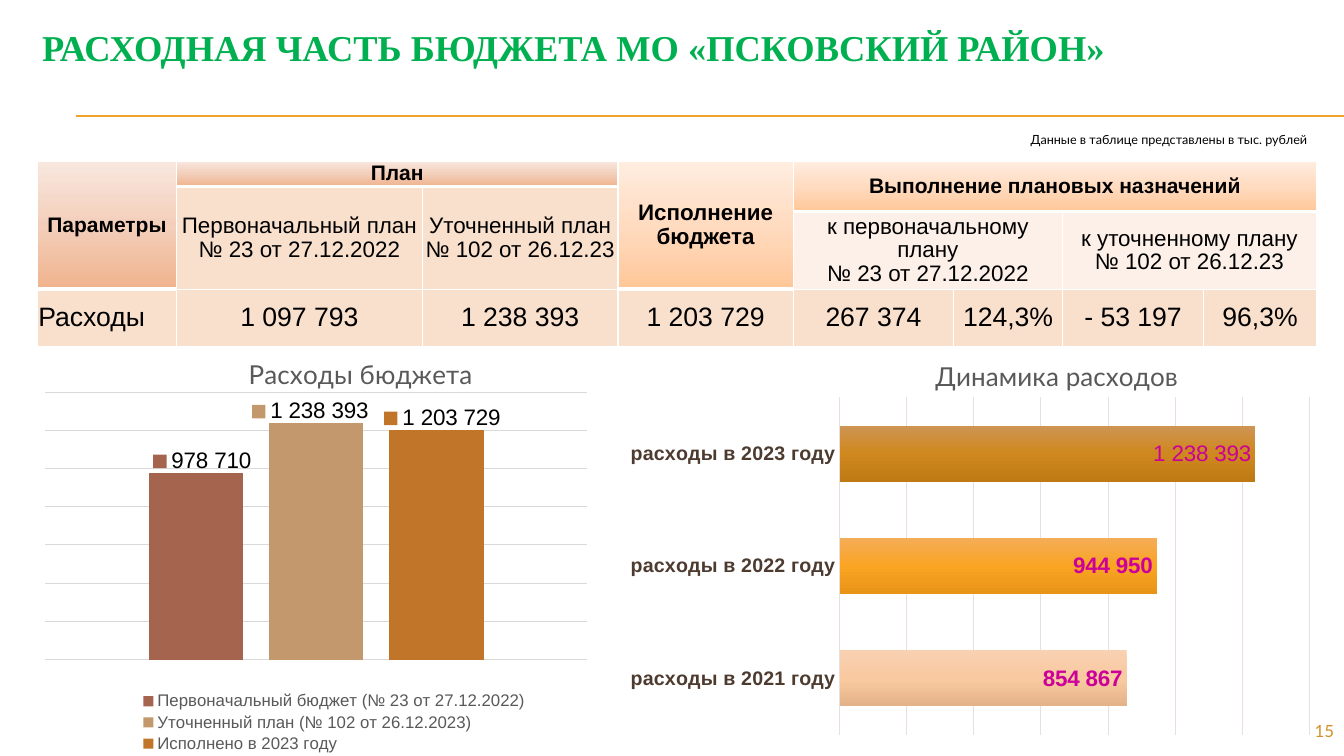
from dataclasses import dataclass
from lxml.etree import SubElement
from pptx import Presentation
from pptx.chart.data import CategoryChartData as Data
from pptx.dml.color import RGBColor as Rgb
from pptx.enum.chart import XL_CHART_TYPE as Kind, XL_LABEL_POSITION as Spot
from pptx.enum.chart import XL_LEGEND_POSITION as Side, XL_TICK_MARK as Tick
from pptx.enum.shapes import MSO_CONNECTOR as Link
from pptx.enum.text import MSO_ANCHOR as Anchor, PP_ALIGN as Align
from pptx.oxml import parse_xml
from pptx.oxml.ns import nsdecls, qn
from pptx.util import Inches, Pt


@dataclass(frozen=True)
class Theme:
    serif: str = "Times New Roman"
    sans: str = "Lato"
    plain: str = "Arial"
    black: str = "000000"
    white: str = "FFFFFF"
    green: str = "00B050"
    gold: str = "F0A22E"
    number: str = "D48F29"
    grey: str = "595959"
    brown: str = "4E3B30"
    pink: str = "CC0099"
    grid: str = "D9D9D9"
    pale: str = "E9E0DB"
    sand: str = "F9E0CD"
    cream: str = "FCF0E8"
    rose: tuple = ("F8E7DE", "F3CFBB", "EFB38D")
    peach: tuple = ("FFEDE0", "FFDBC0", "FFC798")
    cols: tuple = ("A5644E", "C3986D", "C17529")
    bars: tuple = (("F8D1B2", "F9C9A0", "E3B289"),
                   ("F4AD58", "FAA424", "E89416"),
                   ("CE9454", "CF881E", "BF7A14"))
    head: float = 26
    title: float = 18.6
    cell: float = 16
    cap: float = 15
    sum: float = 19
    label: float = 16
    axis: float = 14
    small: float = 12
    base: float = 10
    note: float = 9


T = Theme()
WIDE, HIGH = Inches(13.33), Inches(7.5)
SPACED = r"[>=1000000]#\ ###\ ##0;###\ ##0"
HEADS = [  # row, column, rows, columns, text, size, bold, fill
    (0, 0, 3, 1, "Параметры", T.cap, True, T.rose),
    (0, 1, 1, 2, "План", T.cap, True, T.rose),
    (0, 3, 3, 1, "Исполнение бюджета", T.cell, True, T.peach),
    (0, 4, 2, 4, "Выполнение плановых назначений", T.cap, True, T.peach),
    (1, 1, 2, 1, "Первоначальный план\n№ 23 от 27.12.2022", T.cell, False, T.sand),
    (1, 2, 2, 1, "Уточненный план № 102 от 26.12.23", T.cell, False, T.sand),
    (2, 4, 1, 2, "к первоначальному плану\n№ 23 от 27.12.2022", T.cell, False, T.cream),
    (2, 6, 1, 2, "к уточненному плану\n№ 102 от 26.12.23", T.cell, False, T.cream),
]
SUMS = ["Расходы", "1 097 793", "1 238 393", "1 203 729",
        "267 374", "124,3%", "- 53 197", "96,3%"]
PLANS = [("Первоначальный бюджет (№ 23 от 27.12.2022)", [978710]),
         ("Уточненный план (№ 102 от 26.12.2023)", [1238393]),
         ("Исполнено в 2023 году", [1203729])]
YEARS = ["расходы в 2021 году", "расходы в 2022 году", "расходы в 2023 году"]
SPENT = [("Расходы", [854867, 944950, 1238393])]


def across(share):
    return round(WIDE * share / 100)


def down(share):
    return round(HIGH * share / 100)


def area(x, y, wide, high):
    """Turn percent shares of the slide into lengths."""
    return across(x), down(y), across(wide), down(high)


def put(item, **values):
    for name, value in values.items():
        setattr(item, name, value)


def style(font, face, size, hue, bold=False):
    put(font, name=face, size=Pt(size), bold=bold)
    font.color.rgb = Rgb.from_string(hue)


def paint(fill, hue):
    fill.solid()
    fill.fore_color.rgb = Rgb.from_string(hue)


def blend(fill, owner, hues):
    """Fill from top to bottom; the fill must be the last gradient in owner."""
    fill.gradient()
    fill.gradient_angle = 270
    stops = owner.xpath(".//a:gsLst")[-1]
    stops.clear()
    for step, hue in enumerate(hues):
        stop = SubElement(stops, qn("a:gs"), pos=str(step * 50000))
        SubElement(stop, qn("a:srgbClr"), val=hue)


def write(slide, box, text, font, align=Align.LEFT, anchor=Anchor.TOP):
    frame = slide.shapes.add_textbox(*area(*box)).text_frame
    put(frame, text=text, word_wrap=True, vertical_anchor=anchor)
    line = frame.paragraphs[0]
    line.alignment = align
    style(line.runs[0].font, *font)


def rule(slide, y):
    line = slide.shapes.add_connector(Link.STRAIGHT, across(5.63), down(y), WIDE, down(y))
    line.line.width = Pt(0.75)
    line.line.color.rgb = Rgb.from_string(T.gold)
    SubElement(line.element.spPr, qn("a:effectLst"))


def edge(cell, base):
    """Give a cell white borders, the lower one base points wide."""
    props = cell._tc.get_or_add_tcPr()
    for spot, (side, width) in enumerate(zip("LRTB", (1, 1, 1, base))):
        props.insert(spot, parse_xml(
            f'<a:ln{side} {nsdecls("a")} w="{Pt(width)}"><a:solidFill>'
            f'<a:srgbClr val="{T.white}"/></a:solidFill></a:ln{side}>'))


def grid(slide):
    frame = slide.shapes.add_table(4, 8, *area(2.78, 21.33, 95.18, 24.13))
    table = frame.table
    put(table, first_row=False, horz_banding=False)
    for col, share in zip(table.columns, (10.35, 18.3, 14.55, 13.05, 11.93, 8.1, 10.5, 8.4)):
        col.width = across(share)
    for row, share in zip(table.rows, (3.33, 3.33, 9.87, 7.6)):
        row.height = down(share)
    sums = [(3, col, 1, 1, text, T.sum, False, T.sand) for col, text in enumerate(SUMS)]
    for row, col, rows, cols, text, size, bold, fill in HEADS + sums:
        cell = table.cell(row, col)
        if rows * cols > 1:
            cell.merge(table.cell(row + rows - 1, col + cols - 1))
        put(cell, text=text, vertical_anchor=Anchor.MIDDLE, margin_left=Inches(0.01),
            margin_right=Inches(0.01), margin_top=Inches(0.01), margin_bottom=0)
        for line in cell.text_frame.paragraphs:
            left = (row, col) == (3, 0)
            put(line, alignment=Align.LEFT if left else Align.CENTER, line_spacing=0.95)
            style(line.runs[0].font, T.plain, size, T.black, bold)
        shaded = isinstance(fill, tuple)
        if shaded:
            blend(cell.fill, frame.element, fill)
        else:
            paint(cell.fill, fill)
        edge(cell, 3 if shaded else 1)


def place(part, index, lead="", **box):
    """Lay out a chart part by shares of the chart, as child number index."""
    for old in part.xpath("c:layout"):
        part.remove(old)
    sizes = "".join(f'<c:{key} val="{value}"/>' for key, value in box.items())
    part.insert(index, parse_xml(
        f'<c:layout {nsdecls("c")}><c:manualLayout>{lead}{sizes}'
        '</c:manualLayout></c:layout>'))


EDGE = '<c:xMode val="edge"/><c:yMode val="edge"/>'
INNER = '<c:layoutTarget val="inner"/>' + EDGE


def graph(slide, kind, box, cats, rows, title, spot, plot, hue, gap, lap):
    data = Data(number_format=SPACED)
    data.categories = cats
    for name, values in rows:
        data.add_series(name, values)
    chart = slide.shapes.add_chart(kind, *area(*box), data).chart
    style(chart.font, T.sans, T.base, T.black)
    put(chart, has_title=True, has_legend=False)
    chart.chart_title.text_frame.text = title
    run = chart.chart_title.text_frame.paragraphs[0].runs[0]
    style(run.font, T.sans, T.title, T.grey)
    place(chart.element.xpath(".//c:title")[0], 1, EDGE, **dict(zip("xy", spot)))
    place(chart.element.xpath(".//c:plotArea")[0], 0, INNER, **dict(zip("xywh", plot)))
    axis = chart.value_axis
    put(axis, visible=False, minimum_scale=0, maximum_scale=1400000,
        major_unit=200000, has_major_gridlines=True)
    line = axis.major_gridlines.format.line
    line.width = Pt(0.75)
    line.color.rgb = Rgb.from_string(hue)
    put(chart.plots[0], gap_width=gap, overlap=lap, vary_by_categories=False)
    return chart


def label(series, spot, hue, bold=False, key=False):
    marks = series.data_labels
    put(marks, show_value=True, show_legend_key=key, position=spot,
        number_format=SPACED, number_format_is_linked=False)
    style(marks.font, T.plain, T.label, hue, bold)


def single(series, index, spot, hue):
    """Style the label of one point apart from the rest."""
    mark = series.points[index].data_label
    style(mark.font, T.plain, T.label, hue)
    mark.position = spot


def budget(slide):
    chart = graph(slide, Kind.COLUMN_CLUSTERED, (2.48, 44.67, 44.79, 55.33), ["1"], PLANS,
                  "Расходы бюджета", (0.35, 0.03), (0.02, 0.13, 0.9, 0.64), T.grid, 219, -27)
    chart.category_axis.visible = False
    chart.has_legend = True
    put(chart.legend, position=Side.BOTTOM, include_in_layout=False)
    style(chart.legend.font, T.plain, T.small, T.grey)
    place(chart.element.xpath(".//c:legend")[0], 1, EDGE, x=0.17, y=0.84, w=0.66, h=0.16)
    for series, hue, shift in zip(chart.plots[0].series, T.cols, (0.01, -0.01, 0.01)):
        paint(series.format.fill, hue)
        label(series, Spot.OUTSIDE_END, T.black, key=True)
        single(series, 0, Spot.OUTSIDE_END, T.black)
        mark = chart.element.xpath(".//c:dLbl")[-1]
        mark.xpath("c:showLegendKey")[0].set("val", "1")
        place(mark, 1, x=shift, y=0.01)


def trend(slide):
    chart = graph(slide, Kind.BAR_CLUSTERED, (45.76, 45.6, 52.21, 53.73), YEARS, SPENT,
                  "Динамика расходов", (0.45, 0.02), (0.32, 0.13, 0.67, 0.83), T.pale, 100, 0)
    axis = chart.category_axis
    put(axis, major_tick_mark=Tick.NONE, minor_tick_mark=Tick.NONE)
    style(axis.tick_labels.font, T.plain, T.axis, T.brown, True)
    axis.format.line.width = Pt(0.75)
    axis.format.line.color.rgb = Rgb.from_string(T.pale)
    series = chart.plots[0].series[0]
    for index, hues in enumerate(T.bars):
        blend(series.points[index].format.fill, chart.element, hues)
    label(series, Spot.INSIDE_END, T.pink, True)
    single(series, 2, Spot.INSIDE_END, T.pink)


def main():
    deck = Presentation()
    put(deck, slide_width=WIDE, slide_height=HIGH)
    slide = deck.slides.add_slide(deck.slide_layouts[6])
    for y in (15.33, 15.47):
        rule(slide, y)
    write(slide, (2.4, 3.6, 95.5, 5.33), "РАСХОДНАЯ ЧАСТЬ БЮДЖЕТА МО «ПСКОВСКИЙ РАЙОН»",
          (T.serif, T.head, T.green, True), anchor=Anchor.MIDDLE)
    write(slide, (77.5, 94.67, 22.5, 5.33), "15", (T.sans, T.small, T.number), Align.RIGHT)
    grid(slide)
    budget(slide)
    trend(slide)
    write(slide, (74.65, 16.8, 23.33, 3.33), "Данные в таблице представлены в тыс. рублей",
          (T.sans, T.note, T.black), Align.RIGHT)
    deck.save("out.pptx")


if __name__ == "__main__":
    main()
